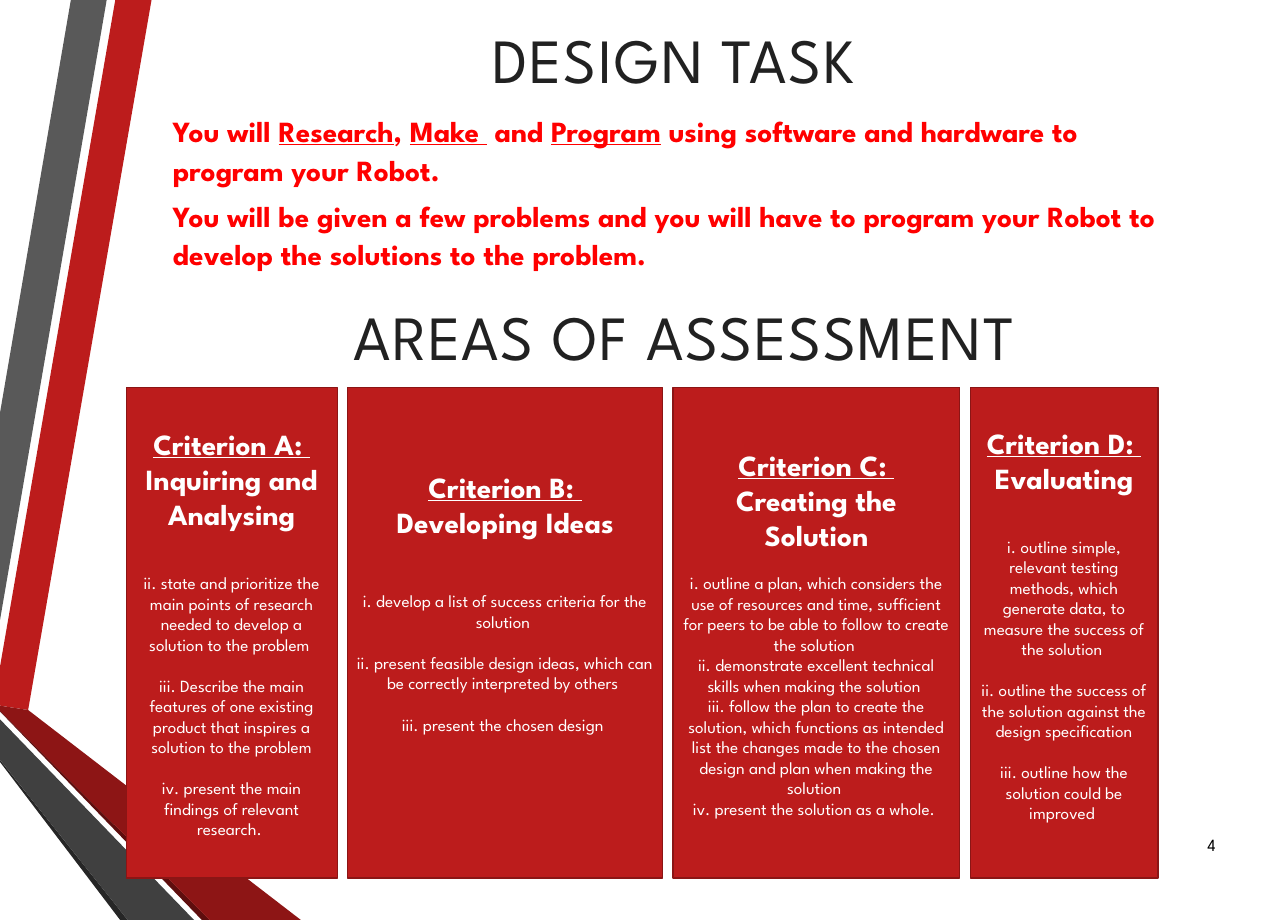
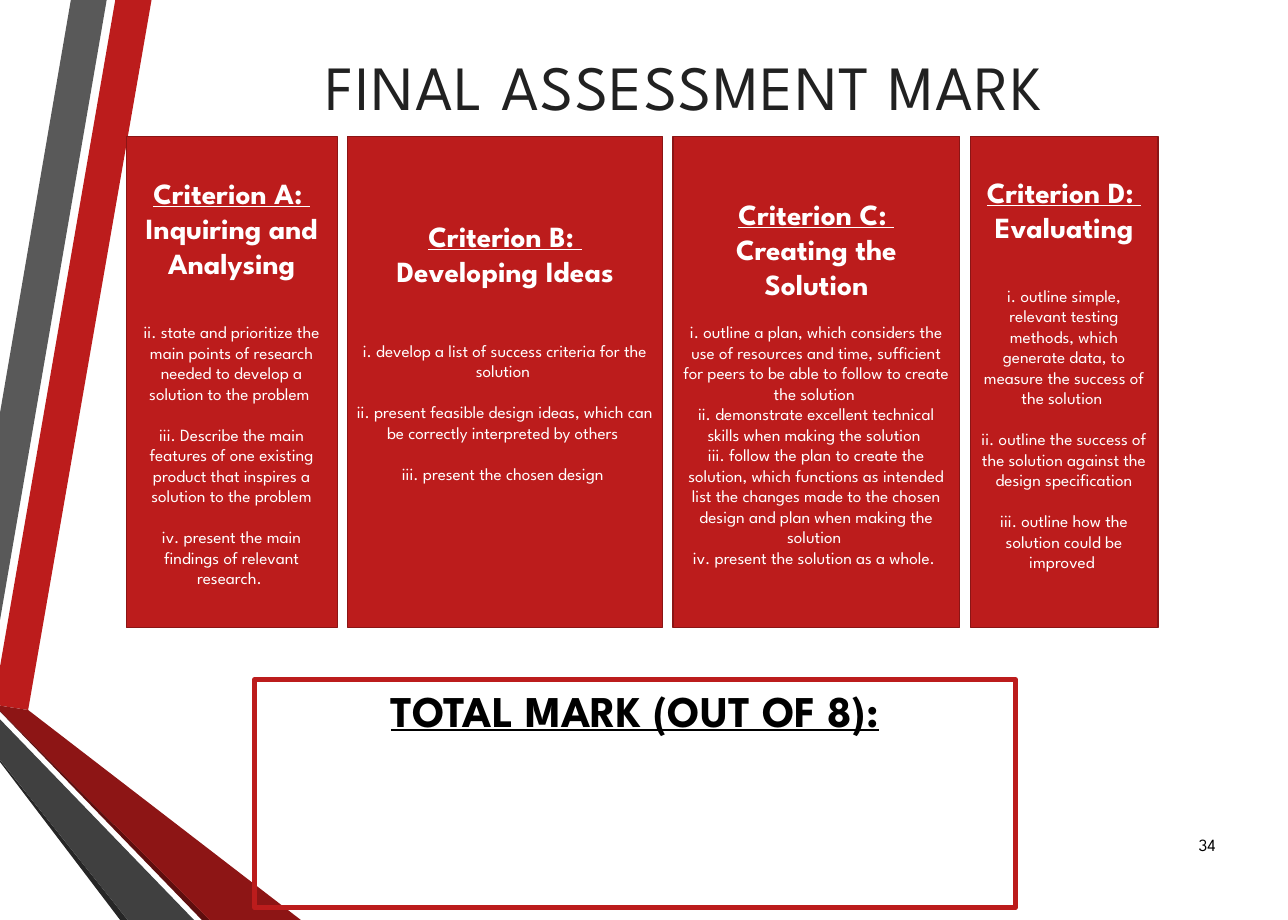
"""Build the two assessment slides of the robot design unit."""
from dataclasses import dataclass

from pptx import Presentation
from pptx.dml.color import RGBColor
from pptx.enum.shapes import MSO_SHAPE
from pptx.enum.text import MSO_ANCHOR, MSO_AUTO_SIZE, PP_ALIGN
from pptx.oxml.ns import qn
from pptx.util import Pt
from lxml.etree import SubElement


@dataclass(frozen=True)
class Theme:
    font: str = "League Spartan"
    red: str = "BC1C1C"
    red_edge: str = "8B1515"
    red_shade: str = "8D1515"
    red_deep: str = "5E0E0E"
    gray: str = "595959"
    gray_shade: str = "404040"
    gray_deep: str = "262626"
    title_ink: str = "212121"
    task_ink: str = "FF0000"
    black: str = "000000"
    white: str = "FFFFFF"
    title_size: float = 58.1
    total_size: float = 40.5
    heading_size: float = 27
    text_size: float = 15.8


THEME = Theme()
WIDTH, HEIGHT = 1190, 850
LINE = 19

BANDS = [
    (THEME.red, [(0, 616), (0, 652), (26, 656), (140, 0), (106.5, 0)]),
    (THEME.gray, [(98.6, 0), (65.5, 0), (0, 381.6), (0, 573)]),
    (THEME.gray_deep, [(0, 702), (0, 704), (111, HEIGHT), (118, HEIGHT)]),
    (THEME.red_deep, [(0, 656.6), (0, 657.4), (186.5, HEIGHT), (193.7, HEIGHT)]),
    (THEME.red_shade, [(0, 656.6), (193.7, HEIGHT), (278, HEIGHT), (26, 656), (0, 652)]),
    (THEME.gray_shade, [(0, 702), (118, HEIGHT), (179.3, HEIGHT), (0, 664.6)]),
]

DESIGN_TASK = [
    [("You will ", False), ("Research", True), (", ", False), ("Make ", True),
     (" and ", False), ("Program", True),
     (" using software and hardware to program your Robot.", False)],
    [("You will be given a few problems and you will have to program your Robot to "
      "develop the solutions to the problem.", False)],
]

CRITERIA = [
    {"name": "Criterion A: ", "topic": "Inquiring and Analysing", "width": 195,
     "lead": 2 * LINE, "gap": LINE, "foot": 0,
     "strands": [
         "ii. state and prioritize the main points of research needed to develop "
         "a solution to the problem ",
         "iii. Describe the main features of one existing product that inspires "
         "a solution to the problem",
         "iv. present the main findings of relevant research. "]},
    {"name": "Criterion B: ", "topic": "Developing Ideas", "width": 291,
     "lead": 2.5 * LINE, "gap": LINE, "foot": 3 * LINE,
     "strands": [
         "i. develop a list of success criteria for the solution ",
         "ii. present feasible design ideas, which can be correctly interpreted by others ",
         "iii. present the chosen design "]},
    {"name": "Criterion C: ", "topic": "Creating the Solution", "width": 265,
     "lead": LINE, "gap": 0, "foot": 0,
     "strands": [
         "i. outline a plan, which considers the use of resources and time, sufficient "
         "for peers to be able to follow to create the solution ",
         "ii. demonstrate excellent technical skills when making the solution ",
         "iii. follow the plan to create the solution, which functions as intended list "
         "the changes made to the chosen design and plan when making the solution ",
         "iv. present the solution as a whole. "]},
    {"name": "Criterion D: ", "topic": "Evaluating", "width": 173.5,
     "lead": 2 * LINE, "gap": LINE, "foot": 16,
     "strands": [
         "i. outline simple, relevant testing methods, which generate data, to measure "
         "the success of the solution ",
         "ii. outline the success of the solution against the design specification",
         "iii. outline how the solution could be improved "]},
]
CARD_LEFT, CARD_GAP, CARD_HEIGHT = 116.6, 9.6, 453.6


def rgb(color):
    return RGBColor.from_string(color)


def style(paragraph, size, color, align=PP_ALIGN.CENTER, bold=False, underline=False):
    paragraph.alignment = align
    for run in paragraph.runs:
        font = run.font
        font.name, font.size, font.bold = THEME.font, Pt(size), bold
        font.underline = underline
        font.color.rgb = rgb(color)


def place(shape, left, top, width, height):
    shape.left, shape.top = Pt(left), Pt(top)
    shape.width, shape.height = Pt(width), Pt(height)
    frame = shape.text_frame
    frame.word_wrap = True
    frame.auto_size = MSO_AUTO_SIZE.NONE
    frame.vertical_anchor = MSO_ANCHOR.TOP
    frame.margin_left = frame.margin_right = Pt(10.8)
    frame.margin_top = frame.margin_bottom = Pt(5)
    return frame


def write_title(shape, text, left, top):
    frame = place(shape, left, top, 946.8, 93)
    frame.text = text
    heading = frame.paragraphs[0]
    heading.line_spacing = 0.9
    style(heading, THEME.title_size, THEME.title_ink)
    for properties in shape.element.iter(qn("a:rPr")):
        properties.set("spc", "150")


def write_task(body):
    frame = place(body, 149, 96.5, 946.8, 78)
    for index, pieces in enumerate(DESIGN_TASK):
        sentence = frame.add_paragraph() if index else frame.paragraphs[0]
        for text, _ in pieces:
            sentence.add_run().text = text
        sentence.line_spacing, sentence.space_before = 1.1, Pt(7)
        style(sentence, THEME.heading_size, THEME.task_ink, PP_ALIGN.LEFT, bold=True)
        for run, (_, underlined) in zip(sentence.runs, pieces):
            run.font.underline = underlined
    for properties in body.element.iter(qn("a:pPr")):
        properties.set("marL", "0")
        properties.set("indent", "0")
        SubElement(properties, qn("a:buNone"))


def add_box(slide, left, top, width, height, edge, edge_width):
    box = slide.shapes.add_shape(
        MSO_SHAPE.RECTANGLE, Pt(left), Pt(top), Pt(width), Pt(height))
    box.shadow.inherit = False
    box.fill.background()
    box.line.color.rgb = rgb(edge)
    box.line.width = Pt(edge_width)
    return box


def add_criteria(slide, top):
    left = CARD_LEFT
    for criterion in CRITERIA:
        card = add_box(slide, left, top, criterion["width"], CARD_HEIGHT,
                       THEME.red_edge, 1.25)
        card.fill.solid()
        card.fill.fore_color.rgb = rgb(THEME.red)
        frame = card.text_frame
        frame.vertical_anchor = MSO_ANCHOR.MIDDLE
        frame.margin_bottom = Pt(3.6 + criterion["foot"])
        frame.text = "\n".join(
            [criterion["name"], criterion["topic"], *criterion["strands"]])
        name, topic, *strands = frame.paragraphs
        style(name, THEME.heading_size, THEME.white, bold=True, underline=True)
        style(topic, THEME.heading_size, THEME.white, bold=True)
        for index, strand in enumerate(strands):
            strand.space_before = Pt(criterion["gap"] if index else criterion["lead"])
            style(strand, THEME.text_size, THEME.white)
        left += criterion["width"] + CARD_GAP


def add_page_number(slide, number):
    box = slide.shapes.add_textbox(0, 0, 0, 0)
    frame = place(box, 1075, 757.5, 55.4, 45.4)
    frame.vertical_anchor = MSO_ANCHOR.MIDDLE
    frame.margin_left = frame.margin_right = Pt(7.2)
    frame.text = str(number)
    style(frame.paragraphs[0], THEME.text_size, THEME.black, PP_ALIGN.RIGHT)


def add_total(slide):
    total = add_box(slide, 235.4, 627.8, 702.7, 211, THEME.red, 4.5)
    frame = total.text_frame
    frame.vertical_anchor = MSO_ANCHOR.TOP
    frame.text = "TOTAL MARK (OUT OF 8):"
    style(frame.paragraphs[0], THEME.total_size, THEME.black, bold=True, underline=True)


def add_bands_to_master(prs, slide):
    master_tree = prs.slide_master.shapes.element
    for position, (color, corners) in enumerate(BANDS, start=2):
        points = [(Pt(x), Pt(y)) for x, y in corners]
        builder = slide.shapes.build_freeform(*points[0])
        builder.add_line_segments(points[1:], close=True)
        band = builder.convert_to_shape()
        band.shadow.inherit = False
        band.fill.solid()
        band.fill.fore_color.rgb = rgb(color)
        band.line.fill.background()
        master_tree.insert(position, band.element)


def main():
    prs = Presentation()
    prs.slide_width, prs.slide_height = Pt(WIDTH), Pt(HEIGHT)

    task = prs.slides.add_slide(prs.slide_layouts[1])
    add_bands_to_master(prs, task)
    write_title(task.shapes.title, "DESIGN TASK", 149, 21.6)
    write_task(task.placeholders[1])
    write_title(task.shapes.add_textbox(0, 0, 0, 0), "AREAS OF ASSESSMENT", 159, 278)
    add_criteria(task, 357.8)
    add_page_number(task, 4)

    mark = prs.slides.add_slide(prs.slide_layouts[5])
    write_title(mark.shapes.title, "FINAL ASSESSMENT MARK", 159, 46.8)
    add_criteria(mark, 126)
    add_total(mark)
    add_page_number(mark, 34)

    prs.save("out.pptx")


if __name__ == "__main__":
    main()
